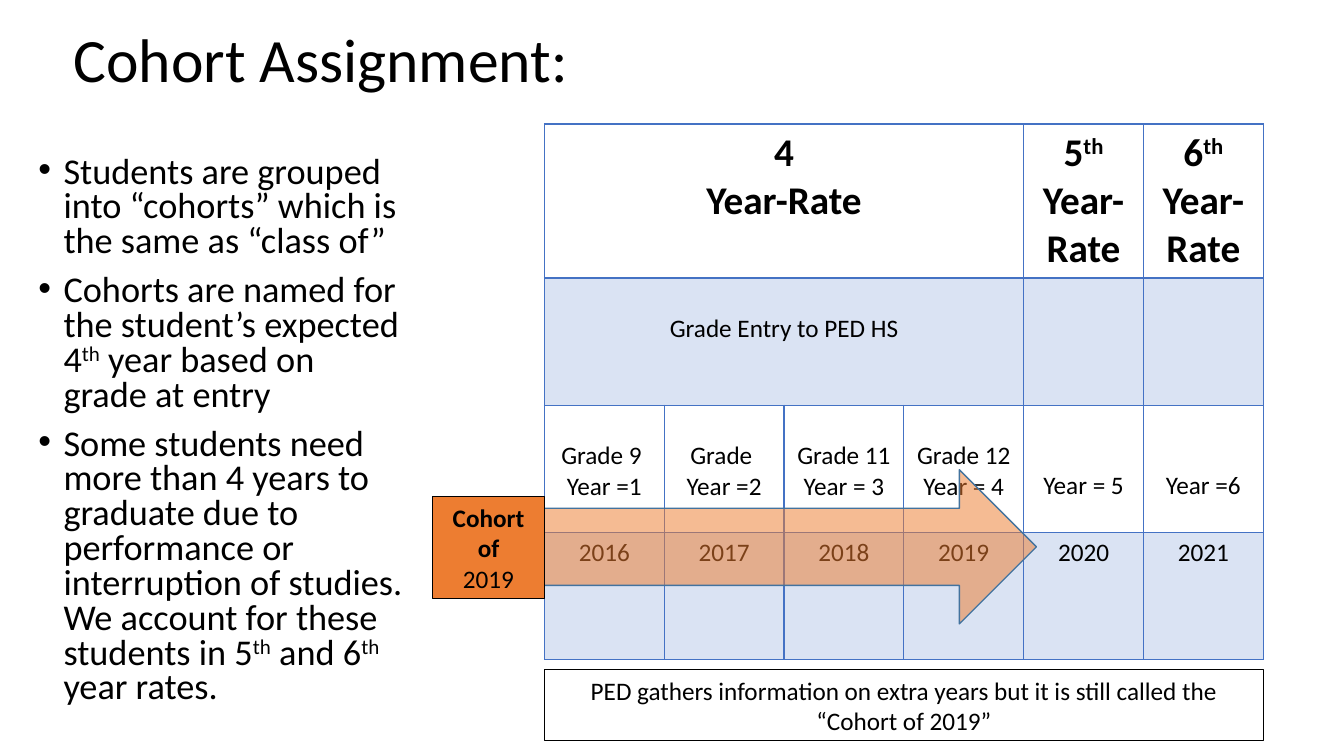
from lxml import etree
from pptx import Presentation
from pptx.dml.color import RGBColor
from pptx.enum.shapes import MSO_SHAPE
from pptx.enum.text import MSO_ANCHOR, MSO_AUTO_SIZE, PP_ALIGN
from pptx.oxml.ns import qn
from pptx.util import Inches, Pt

CENTER, LEFT = PP_ALIGN.CENTER, PP_ALIGN.LEFT
TOP, MIDDLE = MSO_ANCHOR.TOP, MSO_ANCHOR.MIDDLE
NO_AUTOFIT = MSO_AUTO_SIZE.NONE
RECTANGLE, RIGHT_ARROW = MSO_SHAPE.RECTANGLE, MSO_SHAPE.RIGHT_ARROW

FONT = "Calibri"
COLORS = {"text": "000000", "grid": "4472C4", "band": "DAE3F3",
          "cohort": "ED7D31", "arrow_line": "43739E"}

# Text between carets is superscript.
TITLE = "Cohort Assignment:"
BULLETS = [
    "Students are grouped into “cohorts” which is the same as “class of”",
    "Cohorts are named for the student’s expected 4^th^ year based on grade at entry",
    "Some students need more than 4 years to graduate due to performance or "
    "interruption of studies. We account for these students in 5^th^ and 6^th^ year rates.",
]
RATES = [["4", "Year-Rate"], [], [], [], ["5^th^ Year-Rate"], ["6^th^ Year-Rate"]]
ENTRY = [["Grade Entry to PED HS"], [], [], [], [], []]
GRADES = [["Grade 9 ", "Year =1"], ["Grade ", "Year =2"], ["Grade 11", "Year = 3"],
          ["Grade 12", "Year = 4"], ["Year = 5"], ["Year =6"]]
YEARS = [["2016"], ["2017"], ["2018"], ["2019"], ["2020"], ["2021"]]
# cells, size, bold, last text line (0 starts at the top), banded, merged
ROWS = [
    (RATES, 28, True, 0, False, True),
    (ENTRY, 18, False, 2, True, True),
    (GRADES, 18, False, 3, False, False),
    (YEARS, 18, False, 0, True, False),
]
NOTE = "PED gathers information on extra years but it is still called the “Cohort of 2019”"

TABLE_LEFT, TABLE_TOP, TABLE_WIDTH = 5.4, 1.23, 7.13
ROW_HEIGHT = 1.26
HEADER_HEIGHT = 1.53
LINE_HEIGHT = 0.3
CELL_MARGIN = 0.05
MERGED_COLUMNS = 4


def color(name):
    return RGBColor.from_string(COLORS[name])


def write(paragraph, text, size, bold=False, align=CENTER):
    for index, part in enumerate(text.split("^")):
        run = paragraph.add_run()
        run.text = part
        if index % 2:
            run.font._element.set("baseline", "30000")
    paragraph.alignment = align
    font = paragraph.font
    font.name, font.size, font.bold = FONT, Pt(size), bold
    font.color.rgb = color("text")


def write_lines(frame, lines, size, bold=False, align=CENTER):
    for index, line in enumerate(lines):
        paragraph = frame.add_paragraph() if index else frame.paragraphs[0]
        write(paragraph, line, size, bold, align)


def place(shape, left, top, width, height):
    shape.left, shape.top = Inches(left), Inches(top)
    shape.width, shape.height = Inches(width), Inches(height)


def add_block(slide, kind, box, fill, line, line_width):
    shape = slide.shapes.add_shape(kind, *map(Inches, box))
    shape.shadow.inherit = False
    if fill:
        shape.fill.solid()
        shape.fill.fore_color.rgb = color(fill)
    else:
        shape.fill.background()
    shape.line.color.rgb = color(line)
    shape.line.width = Pt(line_width)
    shape.text_frame.word_wrap = True
    return shape


def add_borders(cell, bottom_width):
    properties = cell._tc.get_or_add_tcPr()
    for index, side in enumerate(("lnL", "lnR", "lnT", "lnB")):
        width = bottom_width if side == "lnB" else 1
        border = etree.Element(qn(f"a:{side}"), w=str(Pt(width)))
        fill = etree.SubElement(border, qn("a:solidFill"))
        etree.SubElement(fill, qn("a:srgbClr"), val=COLORS["grid"])
        properties.insert(index, border)


def add_cohort_table(slide):
    columns = len(YEARS)
    frame = slide.shapes.add_table(
        len(ROWS), columns, Inches(TABLE_LEFT), Inches(TABLE_TOP), Inches(TABLE_WIDTH),
        Inches(HEADER_HEIGHT + ROW_HEIGHT * (len(ROWS) - 1)))
    table = frame.table
    table.first_row = table.horz_banding = False
    for row, (cells, size, bold, last_line, banded, merged) in enumerate(ROWS):
        table.rows[row].height = Inches(ROW_HEIGHT if row else HEADER_HEIGHT)
        for column, lines in enumerate(cells):
            cell = table.cell(row, column)
            if banded:
                cell.fill.solid()
                cell.fill.fore_color.rgb = color("band")
            else:
                cell.fill.background()
            add_borders(cell, 1 if row else 2)
            skipped = max(last_line - len(lines), 0)
            cell.margin_top = Inches(CELL_MARGIN + skipped * LINE_HEIGHT)
            write_lines(cell.text_frame, lines, size, bold)
        if merged:
            table.cell(row, 0).merge(table.cell(row, MERGED_COLUMNS - 1))


def add_title_and_bullets(slide):
    title, body = slide.placeholders
    place(title, 0.63, -0.1, 11.5, 1.45)
    title.text_frame.vertical_anchor = MIDDLE
    write_lines(title.text_frame, [TITLE], 44, align=LEFT)
    title.text_frame.paragraphs[0].line_spacing = 0.9

    place(body, 0.28, 1.5, 3.84, 5.75)
    body.text_frame.vertical_anchor = TOP
    write_lines(body.text_frame, BULLETS, 25.9, align=LEFT)
    for paragraph in body.text_frame.paragraphs:
        paragraph.line_spacing = 0.8
        paragraph.space_before = Pt(10)
        properties = paragraph._p.get_or_add_pPr()
        properties.set("marL", str(Inches(0.25)))
        properties.set("indent", str(-Inches(0.25)))
    for shape in (title, body):
        shape.text_frame.auto_size = NO_AUTOFIT


def main():
    presentation = Presentation()
    presentation.slide_width, presentation.slide_height = Inches(13.33), Inches(7.5)
    slide = presentation.slides.add_slide(presentation.slide_layouts[1])
    add_title_and_bullets(slide)
    add_cohort_table(slide)

    arrow = add_block(slide, RIGHT_ARROW, (4.83, 4.66, 5.45, 1.53), "cohort", "arrow_line", 1)
    arrow_color = arrow._element.spPr.find(qn("a:solidFill")).find(qn("a:srgbClr"))
    etree.SubElement(arrow_color, qn("a:alpha"), val="52000")

    cohort = add_block(slide, RECTANGLE, (4.29, 4.93, 1.11, 1.01), "cohort", "text", 0.75)
    write_lines(cohort.text_frame, ["Cohort of", "2019"], 18, bold=True)
    cohort.text_frame.paragraphs[1].font.bold = False

    note = add_block(slide, RECTANGLE, (TABLE_LEFT, 6.64, TABLE_WIDTH, 0.71), None, "text", 0.75)
    write_lines(note.text_frame, [NOTE], 18)
    presentation.save("out.pptx")


if __name__ == "__main__":
    main()
